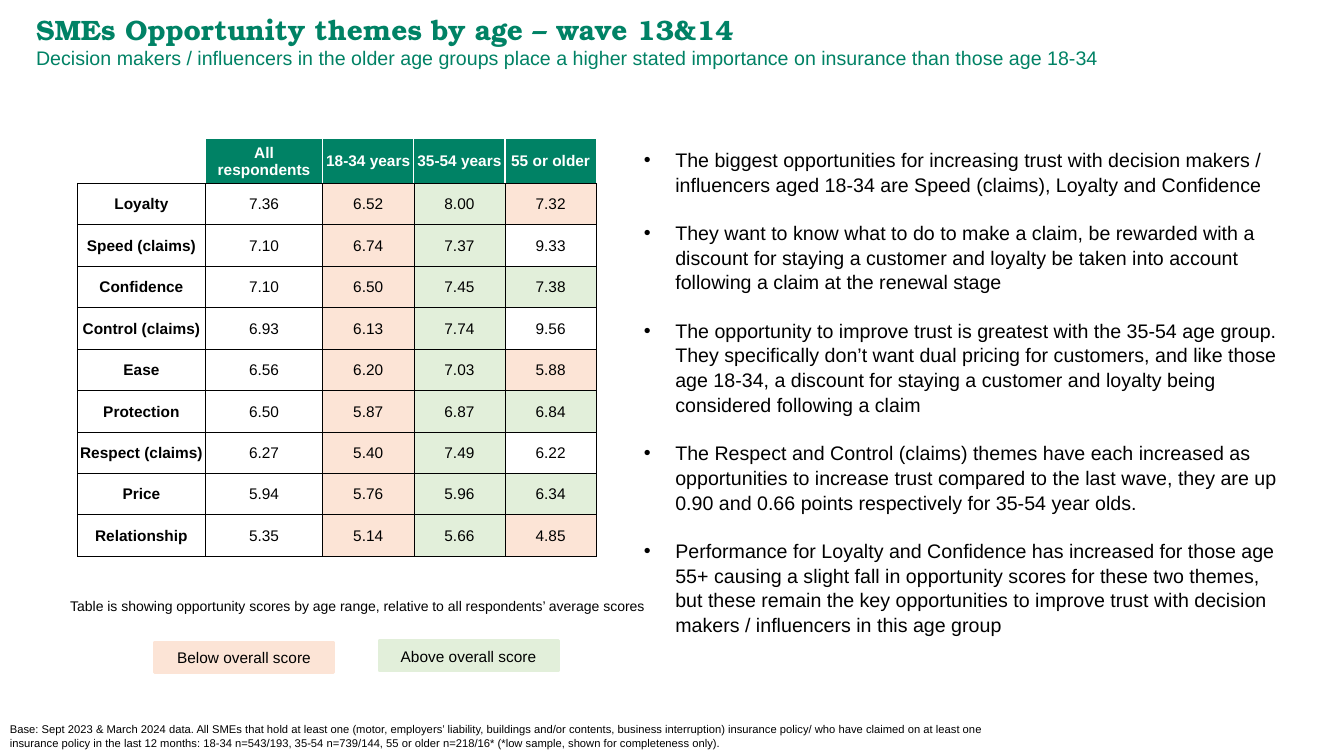
from lxml.etree import SubElement
from pptx import Presentation
from pptx.dml.color import RGBColor
from pptx.enum.shapes import MSO_SHAPE
from pptx.enum.text import MSO_ANCHOR, PP_ALIGN
from pptx.oxml.ns import qn
from pptx.util import Cm, Pt

GREEN = RGBColor(0x00, 0x82, 0x65)
PEACH = RGBColor(0xFC, 0xE4, 0xD6)
MINT = RGBColor(0xE2, 0xEF, 0xDA)
WHITE = RGBColor(0xFF, 0xFF, 0xFF)
BLACK = RGBColor(0x00, 0x00, 0x00)

TITLE = {"name": "TeX Gyre Bonum", "size": Pt(20), "bold": True}
SUBTITLE = {"name": "Arial", "size": Pt(14), "bold": False}
BODY = {"name": "Arial", "size": Pt(14)}
CELL = {"name": "Arial", "size": Pt(11), "bold": False}
CELL_BOLD = {**CELL, "bold": True}
CAPTION = {"name": "Arial", "size": Pt(10)}
FOOTNOTE = {"name": "Arial", "size": Pt(8)}

AGE_GROUPS = ["", "All respondents", "18-34 years", "35-54 years", "55 or older"]
SCORES = [
    ("Loyalty", 7.36, 6.52, 8.00, 7.32),
    ("Speed (claims)", 7.10, 6.74, 7.37, 9.33),
    ("Confidence", 7.10, 6.50, 7.45, 7.38),
    ("Control (claims)", 6.93, 6.13, 7.74, 9.56),
    ("Ease", 6.56, 6.20, 7.03, 5.88),
    ("Protection", 6.50, 5.87, 6.87, 6.84),
    ("Respect (claims)", 6.27, 5.40, 7.49, 6.22),
    ("Price", 5.94, 5.76, 5.96, 6.34),
    ("Relationship", 5.35, 5.14, 5.66, 4.85),
]
FINDINGS = [
    "The biggest opportunities for increasing trust with decision makers / influencers "
    "aged 18-34 are Speed (claims), Loyalty and Confidence",
    "They want to know what to do to make a claim, be rewarded with a discount for staying "
    "a customer and loyalty be taken into account following a claim at the renewal stage",
    "The opportunity to improve trust is greatest with the 35-54 age group. They "
    "specifically don’t want dual pricing for customers, and like those age 18-34, a "
    "discount for staying a customer and loyalty being considered following a claim",
    "The Respect and Control (claims) themes have each increased as opportunities to "
    "increase trust compared to the last wave, they are up 0.90 and 0.66 points "
    "respectively for 35-54 year olds.",
    "Performance for Loyalty and Confidence has increased for those age 55+ causing a "
    "slight fall in opportunity scores for these two themes, but these remain the key "
    "opportunities to improve trust with decision makers / influencers in this age group",
]
BASE_NOTE = (
    "Base: Sept 2023 & March 2024 data. All SMEs that hold at least one (motor, employers’ "
    "liability, buildings and/or contents, business interruption) insurance policy/ who have "
    "claimed on at least one insurance policy in the last 12 months: 18-34 n=543/193, "
    "35-54 n=739/144, 55 or older n=218/16* (*low sample, shown for completeness only)."
)


def write(paragraph, text, style, color):
    """Put a run of text in a paragraph with the given font values."""
    run = paragraph.add_run()
    run.text = text
    for attribute, value in style.items():
        setattr(run.font, attribute, value)
    run.font.color.rgb = color


def add_text(slide, box, lines):
    """Add a wrapping text box with one paragraph per (text, style, color)."""
    frame = slide.shapes.add_textbox(*box).text_frame
    frame.word_wrap = True
    for number, line in enumerate(lines):
        paragraph = frame.add_paragraph() if number else frame.paragraphs[0]
        write(paragraph, *line)
    return frame


def add_findings(slide, box):
    """Add the bulleted findings."""
    frame = add_text(slide, box, [(finding, BODY, BLACK) for finding in FINDINGS])
    for side in ("left", "top", "right", "bottom"):
        setattr(frame, f"margin_{side}", 0)
    for number, paragraph in enumerate(frame.paragraphs):
        properties = paragraph._p.get_or_add_pPr()
        properties.set("marL", str(Cm(0.79)))
        properties.set("indent", str(-Cm(0.79)))
        SubElement(properties, qn("a:buFont"), typeface="Arial")
        SubElement(properties, qn("a:buChar"), char="•")
        paragraph.line_spacing = 1.05
        if number:
            paragraph.space_before = Pt(16.9)


def score_fill(theme, overall, score, low_sample):
    """Choose a score's fill by comparing it with the overall score."""
    if low_sample and theme.endswith("(claims)"):
        return WHITE
    return PEACH if score < overall else MINT


def set_borders(cell, borders):
    """Draw cell borders from a dict of side to (color, width)."""
    properties = cell._tc.get_or_add_tcPr()
    for position, (side, (color, width)) in enumerate(borders.items()):
        line = SubElement(properties, qn(f"a:ln{side}"), w=str(width))
        fill = SubElement(line, qn("a:solidFill"))
        SubElement(fill, qn("a:srgbClr"), val=str(color))
        properties.insert(position, line)


def fill_cell(cell, text, style, color, fill, borders):
    """Format one table cell and write its centred text."""
    margins = {"left": 0.03, "right": 0.03, "top": 0.03, "bottom": 0}
    for side, margin in margins.items():
        setattr(cell, f"margin_{side}", Cm(margin))
    cell.vertical_anchor = MSO_ANCHOR.MIDDLE
    cell.fill.solid()
    cell.fill.fore_color.rgb = fill
    paragraph = cell.text_frame.paragraphs[0]
    paragraph.alignment = PP_ALIGN.CENTER
    write(paragraph, text, style, color)
    set_borders(cell, borders)


def add_scores(slide, left, top):
    """Add the table of opportunity scores by age group."""
    widths = [Cm(width) for width in (3.23, 2.95, 2.3, 2.3, 2.3)]
    header_height, row_height = Cm(1.14), Cm(9.4) // len(SCORES)
    table = slide.shapes.add_table(
        len(SCORES) + 1, len(widths), left, top,
        sum(widths), header_height + row_height * len(SCORES),
    ).table
    for column, width in zip(table.columns, widths):
        column.width = width
    for number, row in enumerate(table.rows):
        row.height = row_height if number else header_height
    thin, white = (BLACK, Pt(0.5)), (WHITE, Pt(1))
    header_borders = {"L": white, "R": white, "T": white, "B": thin}
    body_borders = dict.fromkeys("LRTB", thin)
    for column, group in enumerate(AGE_GROUPS):
        fill = GREEN if group else WHITE
        fill_cell(table.cell(0, column), group, CELL_BOLD, WHITE, fill, header_borders)
    for row, (theme, overall, *scores) in enumerate(SCORES, 1):
        entries = [(theme, CELL_BOLD, WHITE), (f"{overall:.2f}", CELL, WHITE)]
        for number, score in enumerate(scores, 1):
            fill = score_fill(theme, overall, score, number == len(scores))
            entries.append((f"{score:.2f}", CELL, fill))
        for column, (text, style, fill) in enumerate(entries):
            fill_cell(table.cell(row, column), text, style, BLACK, fill, body_borders)


def add_legend_key(slide, box, text, color):
    """Add one coloured key of the legend."""
    key = slide.shapes.add_shape(MSO_SHAPE.RECTANGLE, *box)
    key.shadow.inherit = False
    key.fill.solid()
    key.fill.fore_color.rgb = color
    key.line.color.rgb = color
    key.line.width = Pt(2)
    key.text_frame.vertical_anchor = MSO_ANCHOR.MIDDLE
    paragraph = key.text_frame.paragraphs[0]
    paragraph.alignment = PP_ALIGN.CENTER
    write(paragraph, text, CELL, BLACK)


def main():
    """Build the slide and save it."""
    deck = Presentation()
    deck.slide_width, deck.slide_height = Cm(33.87), Cm(19.05)
    slide = deck.slides.add_slide(deck.slide_layouts[6])
    add_text(slide, (Cm(0.66), Cm(0.18), Cm(31.2), Cm(1.7)), [
        ("SMEs Opportunity themes by age – wave 13&14", TITLE, GREEN),
        ("Decision makers / influencers in the older age groups place a higher stated "
         "importance on insurance than those age 18-34", SUBTITLE, GREEN),
    ])
    add_scores(slide, Cm(1.95), Cm(3.48))
    add_findings(slide, (Cm(16.23), Cm(3.7), Cm(16.1), Cm(12.48)))
    add_text(slide, (Cm(1.52), Cm(14.94), Cm(15.14), Cm(1.55)), [
        ("Table is showing opportunity scores by age range, relative to all respondents’ "
         "average scores", CAPTION, BLACK),
    ])
    add_legend_key(slide, (Cm(3.89), Cm(16.18), Cm(4.52), Cm(0.76)), "Below overall score", PEACH)
    add_legend_key(slide, (Cm(9.55), Cm(16.15), Cm(4.52), Cm(0.76)), "Above overall score", MINT)
    add_text(slide, (0, Cm(18.08), Cm(25.43), Cm(0.97)), [(BASE_NOTE, FOOTNOTE, BLACK)])
    deck.save("out.pptx")


if __name__ == "__main__":
    main()
